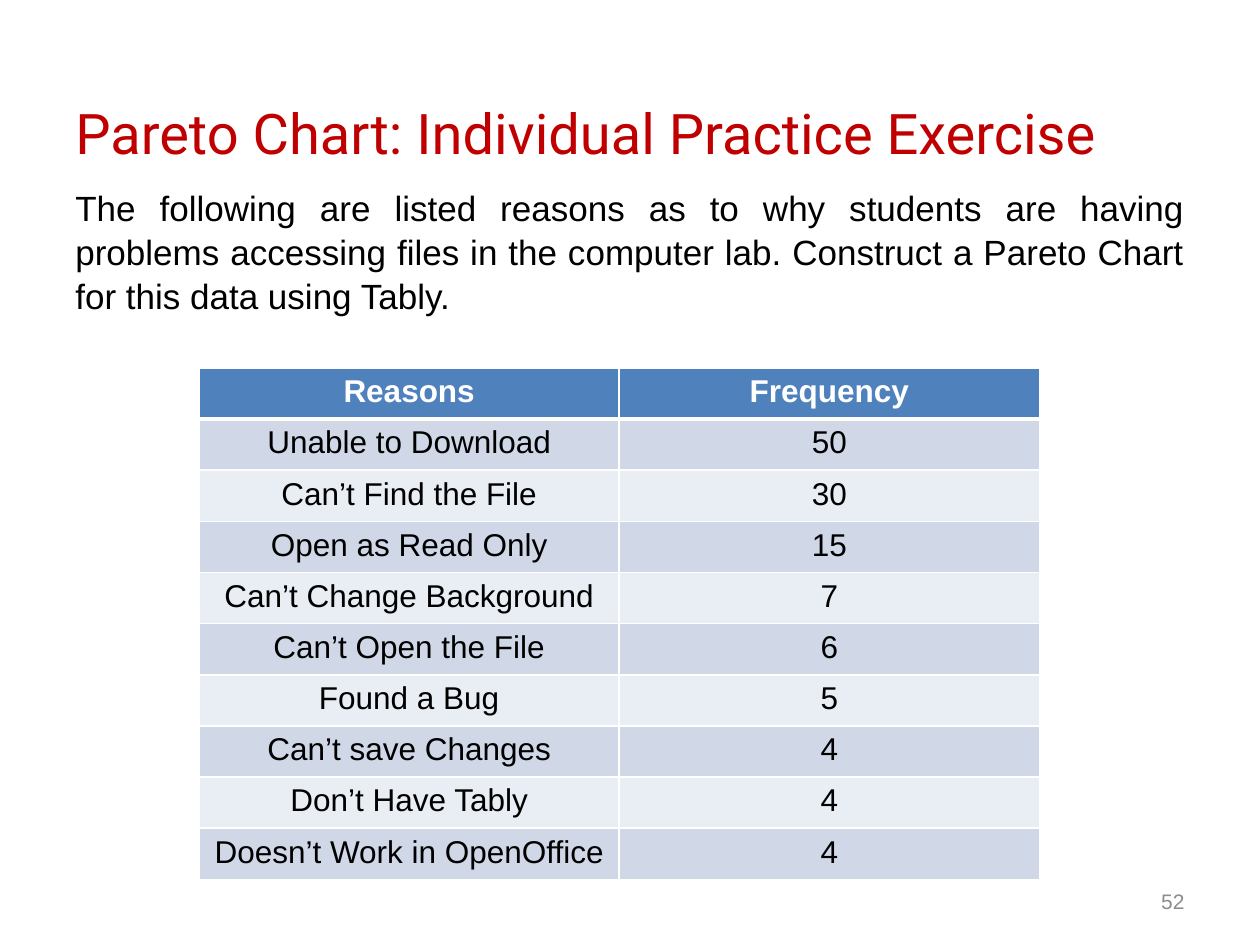
from lxml.etree import SubElement
from pptx import Presentation
from pptx.dml.color import RGBColor
from pptx.enum.text import MSO_ANCHOR, PP_ALIGN
from pptx.oxml.ns import qn
from pptx.util import Inches, Pt

RED = RGBColor(0xC0, 0x00, 0x00)
BLACK = RGBColor(0x00, 0x00, 0x00)
WHITE = RGBColor(0xFF, 0xFF, 0xFF)
GRAY = RGBColor(0x8C, 0x8C, 0x8C)
HEADER_BLUE = RGBColor(0x4F, 0x81, 0xBD)
BAND_DARK = RGBColor(0xD0, 0xD8, 0xE8)
BAND_LIGHT = RGBColor(0xE9, 0xED, 0xF4)

REASONS = [
    ("Reasons", "Frequency"),
    ("Unable to Download", "50"),
    ("Can’t Find the File", "30"),
    ("Open as Read Only", "15"),
    ("Can’t Change Background", "7"),
    ("Can’t Open the File", "6"),
    ("Found a Bug", "5"),
    ("Can’t save Changes", "4"),
    ("Don’t Have Tably", "4"),
    ("Doesn’t Work in OpenOffice", "4"),
]


def write_text(frame, text, size, color, align, font="Arial", bold=False):
    """Fill a text frame with one formatted paragraph and return it."""
    frame.text = text
    para = frame.paragraphs[0]
    para.alignment = align
    span = para.runs[0]
    span.font.name = font
    span.font.size = Pt(size)
    span.font.bold = bold
    span.font.color.rgb = color
    return para


def add_text(page, box, anchor, *style, **options):
    """Place a wrapped text box and return its paragraph."""
    frame = page.shapes.add_textbox(*map(Inches, box)).text_frame
    frame.word_wrap = True
    frame.vertical_anchor = anchor
    return write_text(frame, *style, **options)


def set_borders(cell, bottom_width):
    """Give a cell white borders, inserted ahead of its fill."""
    properties = cell._tc.get_or_add_tcPr()
    for index, side in enumerate(("lnL", "lnR", "lnT", "lnB")):
        width = bottom_width if side == "lnB" else 1
        line = SubElement(properties, qn(f"a:{side}"), w=str(Pt(width)))
        fill = SubElement(line, qn("a:solidFill"))
        SubElement(fill, qn("a:srgbClr"), val=str(WHITE))
        properties.insert(index, line)


def add_reasons_table(page, box):
    """Build the banded table of reasons inside the box."""
    left, top, width, height = map(Inches, box)
    shape = page.shapes.add_table(len(REASONS), 2, left, top, width, height)
    for row, values in enumerate(REASONS):
        header = row == 0
        band = BAND_DARK if row % 2 else BAND_LIGHT
        for column, value in enumerate(values):
            cell = shape.table.cell(row, column)
            write_text(cell.text_frame, value, 18, WHITE if header else BLACK,
                       PP_ALIGN.CENTER, bold=header)
            cell.fill.solid()
            cell.fill.fore_color.rgb = HEADER_BLUE if header else band
            set_borders(cell, 3 if row < 1 else 1)
            if row == 1:
                cell._tc.tcPr.find(qn("a:lnT")).set("w", str(Pt(3)))


def build_exercise(page):
    """Lay out the title, task, table and page number."""
    add_text(page, (0.5, 0.42, 9, 1.25), MSO_ANCHOR.MIDDLE,
             "Pareto Chart: Individual Practice Exercise", 32, RED,
             PP_ALIGN.LEFT, font="Roboto")
    task = add_text(page, (0.5, 1.42, 9, 4.95), MSO_ANCHOR.TOP,
                    "The following are listed reasons as to why students are "
                    "having problems accessing files in the computer lab. "
                    "Construct a Pareto Chart for this data using Tably.",
                    20, BLACK, PP_ALIGN.JUSTIFY)
    task.line_spacing = 1.04
    add_reasons_table(page, (1.58, 2.92, 6.67, 4.06))
    add_text(page, (7.17, 6.95, 2.33, 0.4), MSO_ANCHOR.MIDDLE,
             "52", 12, GRAY, PP_ALIGN.RIGHT)


def main():
    """Create and save the deck."""
    deck = Presentation()
    deck.slide_width = Inches(10)
    deck.slide_height = Inches(7.5)
    build_exercise(deck.slides.add_slide(deck.slide_layouts[6]))
    deck.save("out.pptx")


if __name__ == "__main__":
    main()
